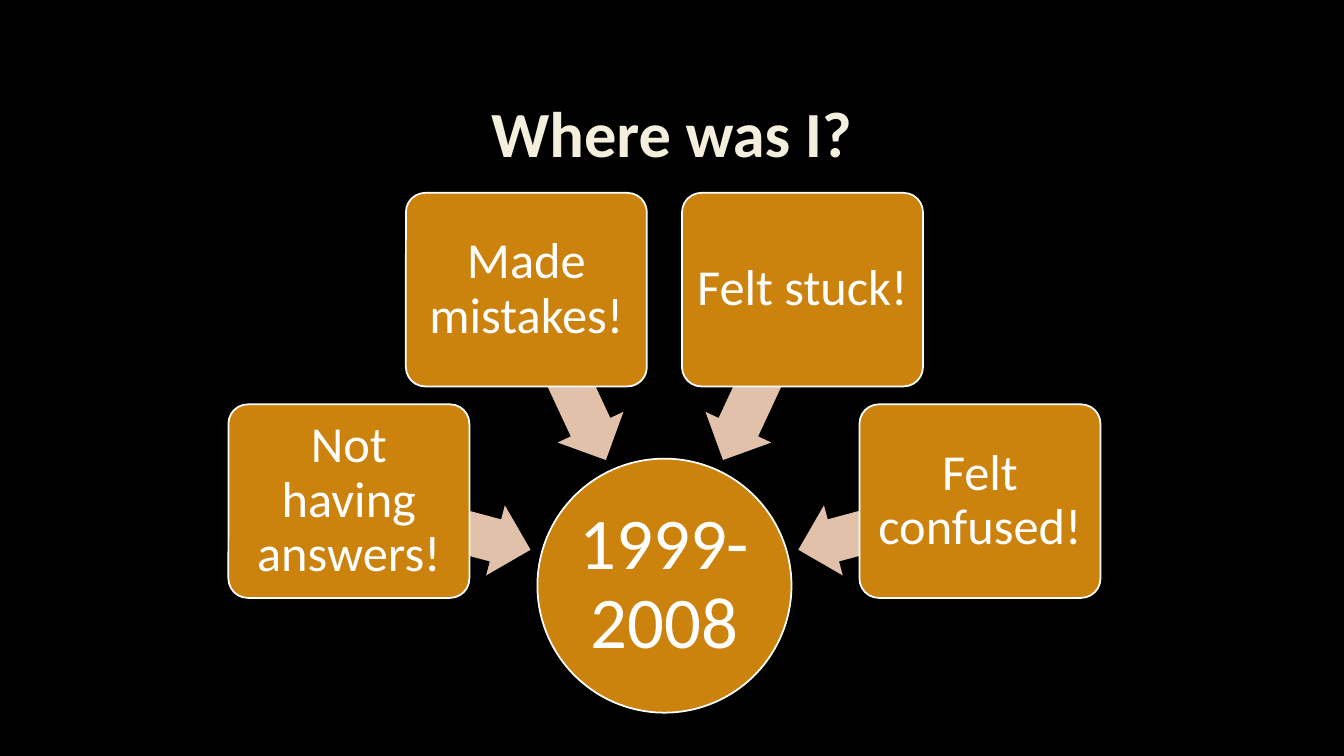
from math import cos, radians, sin

from pptx import Presentation
from pptx.dml.color import RGBColor
from pptx.enum.shapes import MSO_SHAPE
from pptx.enum.text import MSO_ANCHOR, PP_ALIGN
from pptx.util import Inches, Pt

GOLD, PEACH, WHITE, CREAM, BLACK = "CC830E", "E2C1AB", "FFFFFF", "F4EEDC", "000000"
FEELINGS = ["Not having answers!", "Made mistakes!", "Felt stuck!", "Felt confused!"]


def paint(fill, color):
    """Give a fill one solid colour."""
    fill.solid()
    fill.fore_color.rgb = RGBColor.from_string(color)


def write(shape, text, size, color=WHITE, bold=False, inset=0.07):
    """Write centred text into a shape."""
    frame = shape.text_frame
    frame.word_wrap = True
    frame.vertical_anchor = MSO_ANCHOR.MIDDLE
    frame.margin_left = frame.margin_right = Inches(inset)
    frame.margin_top = frame.margin_bottom = Inches(inset)
    line = frame.paragraphs[0]
    line.alignment = PP_ALIGN.CENTER
    line.line_spacing = 0.9
    run = line.add_run()
    run.text = text
    run.font.name = "Calibri"
    run.font.size = Pt(size)
    run.font.bold = bold
    run.font.color.rgb = RGBColor.from_string(color)


def place(slide, kind, mid, size, fill, edge=None):
    """Add a filled preset shape around its middle point."""
    (x, y), (wide, high) = mid, size
    shape = slide.shapes.add_shape(
        kind, Inches(x - wide / 2), Inches(y - high / 2), Inches(wide), Inches(high))
    shape.shadow.inherit = False
    paint(shape.fill, fill)
    if edge:
        paint(shape.line.fill, edge)
        shape.line.width = Pt(1.25)
    else:
        shape.line.fill.background()
    return shape


def title(slide, box, text):
    """Add the heading in its box."""
    head = slide.shapes.add_textbox(*map(Inches, box))
    write(head, text, 46, CREAM, bold=True)


def radial(slide, box, hub, items):
    """Fan cards around a hub at the foot of the box, with arrows pointing in."""
    left, top, wide, high = box
    girth = 2.52
    core = left + wide / 2, top + high - girth / 2

    def polar(reach, angle):
        """Find the point at a distance and angle from the hub."""
        turn = radians(angle)
        return core[0] + reach * cos(turn), core[1] + reach * sin(turn)

    disc = place(slide, MSO_SHAPE.OVAL, core, (girth, girth), GOLD, WHITE)
    write(disc, hub, 52, inset=0.04)
    for index, item in enumerate(items):
        angle = 195 + 150 * index / (len(items) - 1)
        arrow = place(slide, MSO_SHAPE.LEFT_ARROW, polar(2.31, angle), (1.87, 0.72), PEACH)
        arrow.adjustments[0] = 0.6
        arrow.adjustments[1] = 0.5
        arrow.rotation = angle
        card = place(slide, MSO_SHAPE.ROUNDED_RECTANGLE, polar(3.24, angle),
                     (2.39, 1.92), GOLD, WHITE)
        card.adjustments[0] = 0.1
        write(card, item, 36)


def main():
    """Build and save the slide."""
    deck = Presentation()
    deck.slide_width, deck.slide_height = Inches(13.33), Inches(7.5)
    slide = deck.slides.add_slide(deck.slide_layouts[6])
    paint(slide.background.fill, BLACK)
    title(slide, (1, 0.67, 11.32, 1.38), "Where was I?")
    radial(slide, (2.26, 1.92, 8.66, 5.15), "1999-2008", FEELINGS)
    deck.save("out.pptx")


if __name__ == "__main__":
    main()
